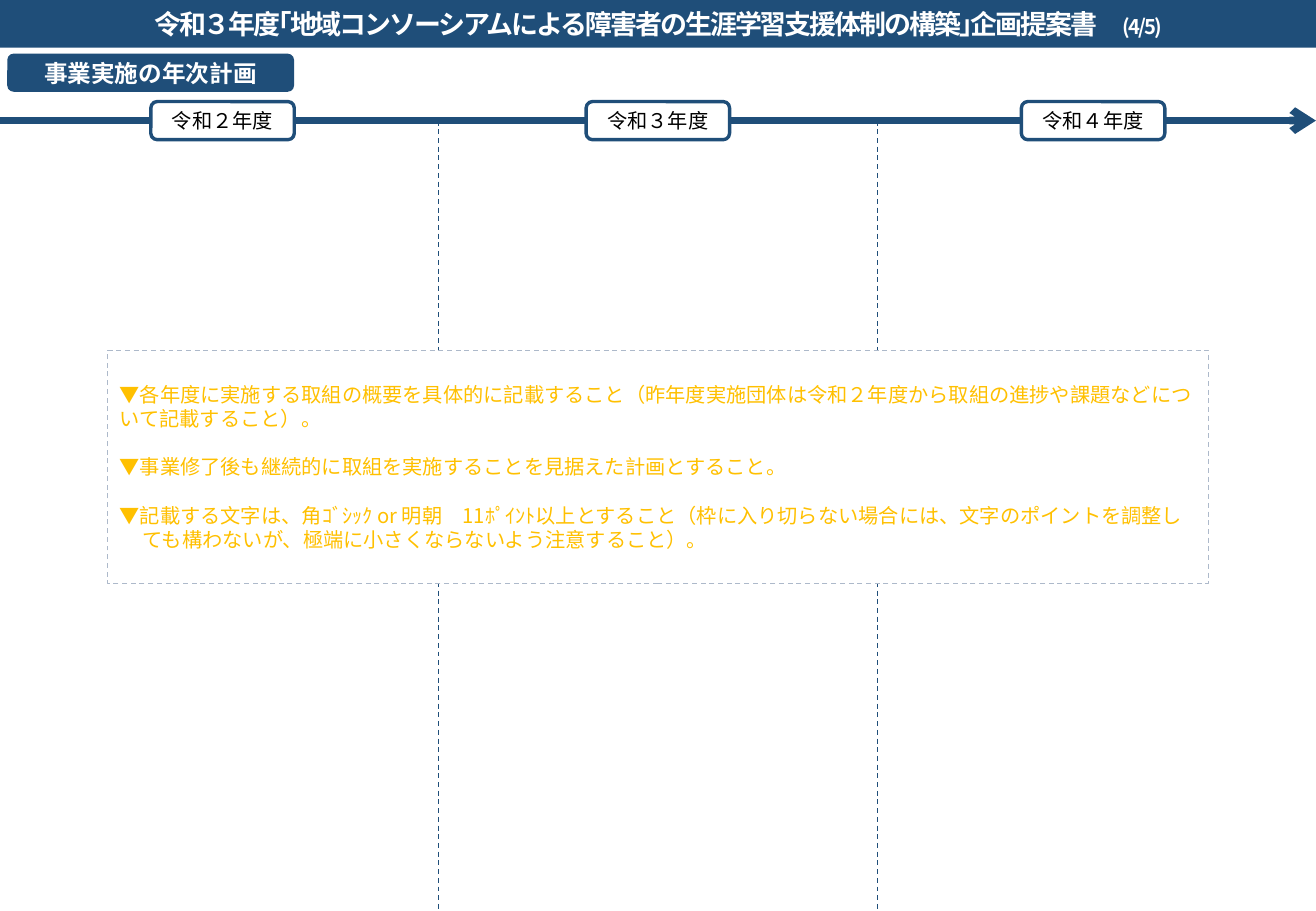
from pptx import Presentation
from pptx.util import Pt
from pptx.dml.color import RGBColor as RGB
from pptx.enum.dml import MSO_LINE as Dash
from pptx.enum.shapes import MSO_SHAPE as Shape, MSO_CONNECTOR as Conn
from pptx.enum.text import PP_ALIGN as Align, MSO_ANCHOR as Anchor, MSO_AUTO_SIZE as Fit
from pptx.oxml.ns import qn
from lxml.etree import SubElement as sub

FACE = "Noto Sans CJK JP"
HUES = {"navy": "1F4E79", "white": "FFFFFF", "black": "000000",
        "gold": "FFC000", "gray": "ADB9CA"}
WIDE, HIGH = 780, 540
YEARS = ["令和２年度", "令和３年度", "令和４年度"]
NOTES = [
    ("▼各年度に実施する取組の概要を具体的に記載すること（昨年度実施団体は令和２年度から取組の進捗や課題などについて記載すること）。", 0),
    ("▼事業修了後も継続的に取組を実施することを見据えた計画とすること。", 0),
    ("▼記載する文字は、角ｺﾞｼｯｸ or 明朝　11ﾎﾟｲﾝﾄ以上とすること（枠に入り切らない場合には、文字のポイントを調整しても構わないが、極端に小さくならないよう注意すること）。", 13.7),
]


def hue(name):
    """Return the named colour."""
    return RGB.from_string(HUES[name])


def style(para, size, color, bold=False, align=Align.CENTER):
    """Set the font and alignment of a paragraph."""
    para.alignment = align
    font = para.font
    font.name, font.size, font.bold = FACE, Pt(size), bold
    font.color.rgb = hue(color)
    sub(para._p.pPr.find(qn("a:defRPr")), qn("a:ea")).set("typeface", FACE)


def paint(shape, fill, line=None, width=0.75):
    """Fill and outline a shape and centre its text upright."""
    shape.fill.solid()
    shape.fill.fore_color.rgb = hue(fill)
    if line:
        shape.line.color.rgb = hue(line)
        shape.line.width = Pt(width)
    else:
        shape.line.fill.background()
    frame = shape.text_frame
    frame.word_wrap = True
    frame.auto_size = Fit.NONE
    frame.vertical_anchor = Anchor.MIDDLE
    return frame


def block(slide, kind, box, *look):
    """Add a painted shape and return it with its text frame."""
    shape = slide.shapes.add_shape(kind, *map(Pt, box))
    shape.shadow.inherit = False
    return shape, paint(shape, *look)


def label(slide, box, text, size, color, bold, *look):
    """Add a rounded label with one line of text."""
    frame = block(slide, Shape.ROUNDED_RECTANGLE, box, *look)[1]
    frame.text = text
    style(frame.paragraphs[0], size, color, bold)


def rule(slide, start, end, width):
    """Add a plain navy line."""
    line = slide.shapes.add_connector(Conn.STRAIGHT, *map(Pt, start + end))
    line.line.color.rgb = hue("navy")
    line.line.width = Pt(width)
    sub(line._element.spPr, qn("a:effectLst"))
    return line


def header(slide, box):
    """Turn the title placeholder into the top band."""
    title = slide.shapes.title
    title.left, title.top, title.width, title.height = map(Pt, box)
    para = paint(title, "navy").paragraphs[0]
    style(para, 16, "white", True)
    for text, size in (
            ("令和３年度｢地域コンソーシアムによる障害者の生涯学習支援体制の構築｣企画提案書　", 16),
            ("(4/5)", 12)):
        run = para.add_run()
        run.text = text
        run.font.size = Pt(size)
        run.font._element.set("spc", "-120")


def years(slide, box):
    """Draw the time arrow, the year labels and the column dividers."""
    left, top, width, height = box
    axis = rule(slide, (left, top), (left + width, top), 4.5)
    sub(axis.line._get_or_add_ln(), qn("a:tailEnd")).set("type", "arrow")
    for i in (1, 2):
        x = left + width * i / 3
        split = rule(slide, (x, top), (x, top + height), 0.75)
        split.line.dash_style = Dash.DASH
    wide, high, step = 85, 22.6, 258
    for i, year in enumerate(YEARS):
        x = left + 89.4 + i * step
        label(slide, (x, top - high / 2, wide, high), year,
              12, "black", False, "white", "navy", 2)


def notes(slide, box):
    """Write the instructions in the dashed box."""
    shape, frame = block(slide, Shape.RECTANGLE, box, "white", "gray")
    shape.line.dash_style = Dash.DASH
    for i, (text, hang) in enumerate(NOTES):
        para = frame.add_paragraph() if i else frame.paragraphs[0]
        para.text = text
        para.line_spacing = Pt(14.4)
        if i:
            para.space_before = Pt(14.4)
        style(para, 12, "gold", align=Align.LEFT)
        if hang:
            para._p.pPr.set("marL", str(Pt(hang)))
            para._p.pPr.set("indent", str(-Pt(hang)))


def main():
    """Build the yearly plan slide."""
    deck = Presentation()
    deck.slide_width, deck.slide_height = Pt(WIDE), Pt(HIGH)
    slide = deck.slides.add_slide(deck.slide_layouts[5])
    header(slide, (0, 0, WIDE, 28.2))
    label(slide, (4.3, 31.8, 170, 22.6), "事業実施の年次計画",
          14, "white", True, "navy")
    years(slide, (0, 71.5, WIDE, HIGH - 71.5))
    notes(slide, (63.8, 207.6, 652.4, 138.2))
    deck.save("out.pptx")


if __name__ == "__main__":
    main()
